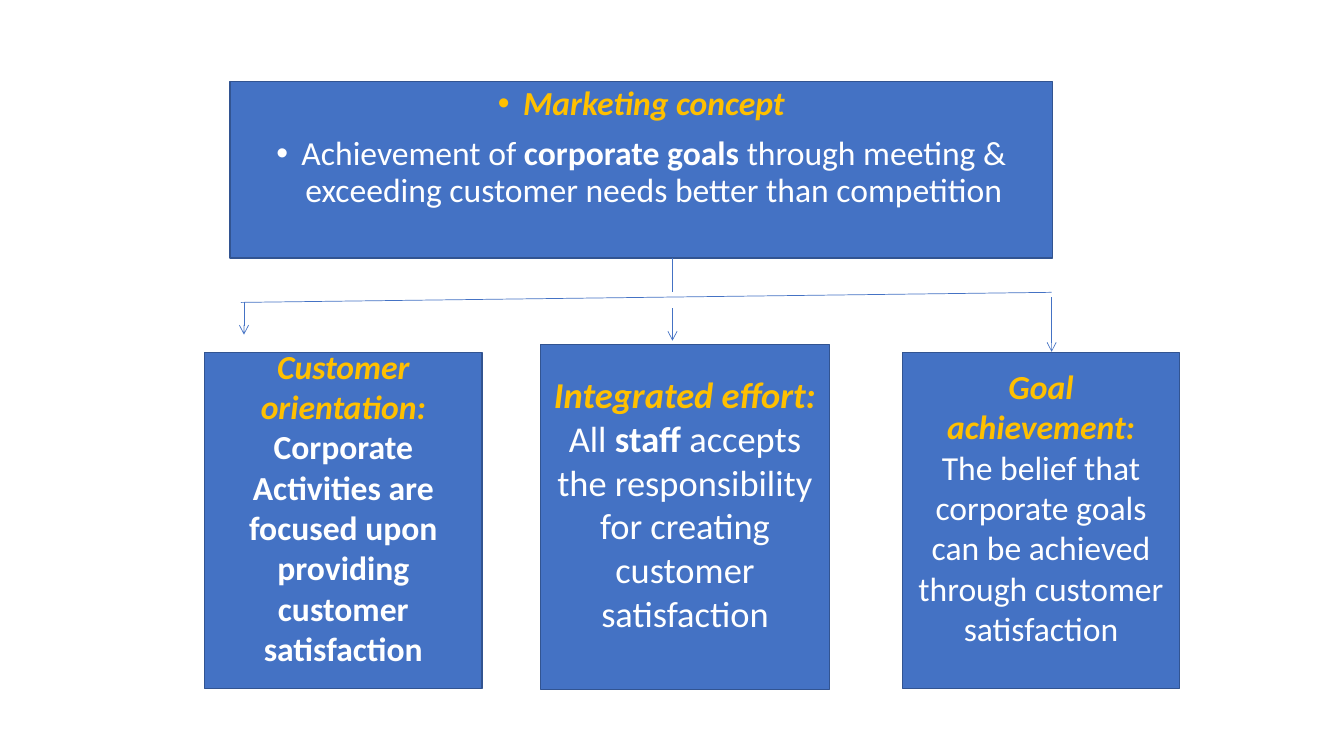
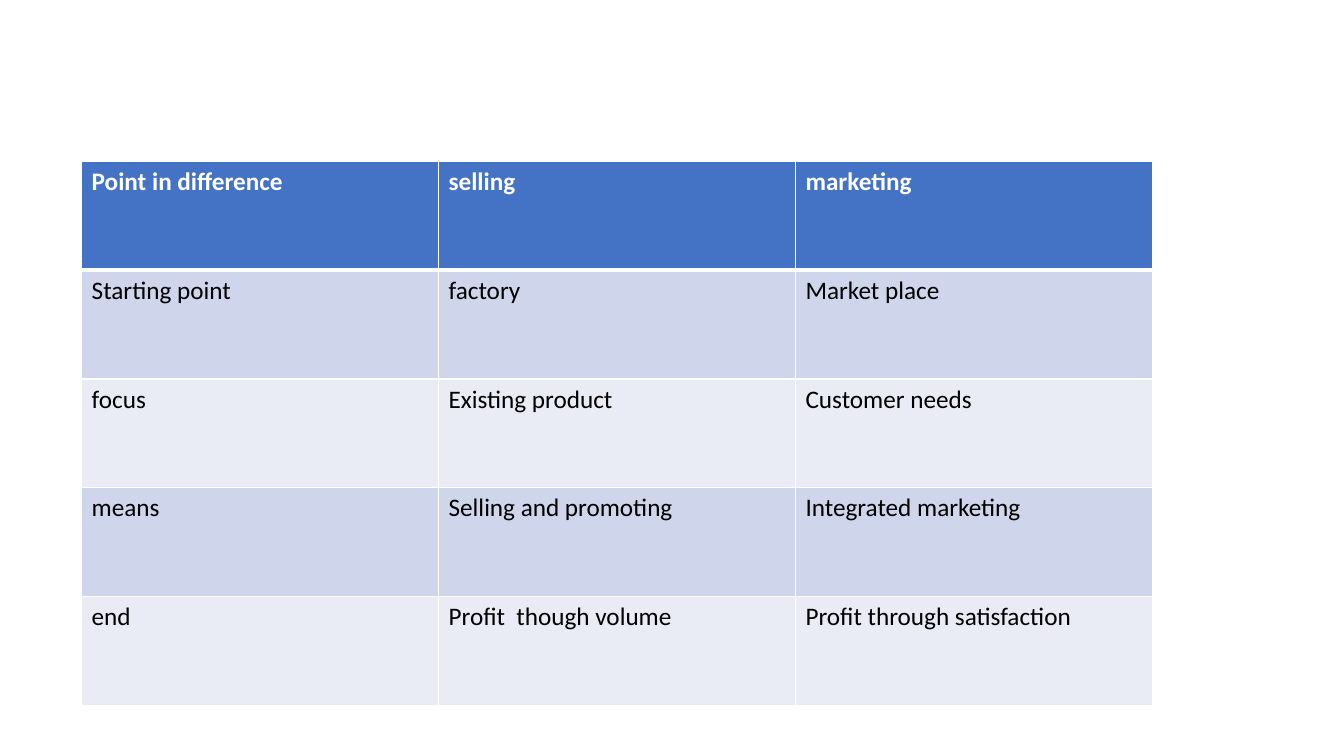
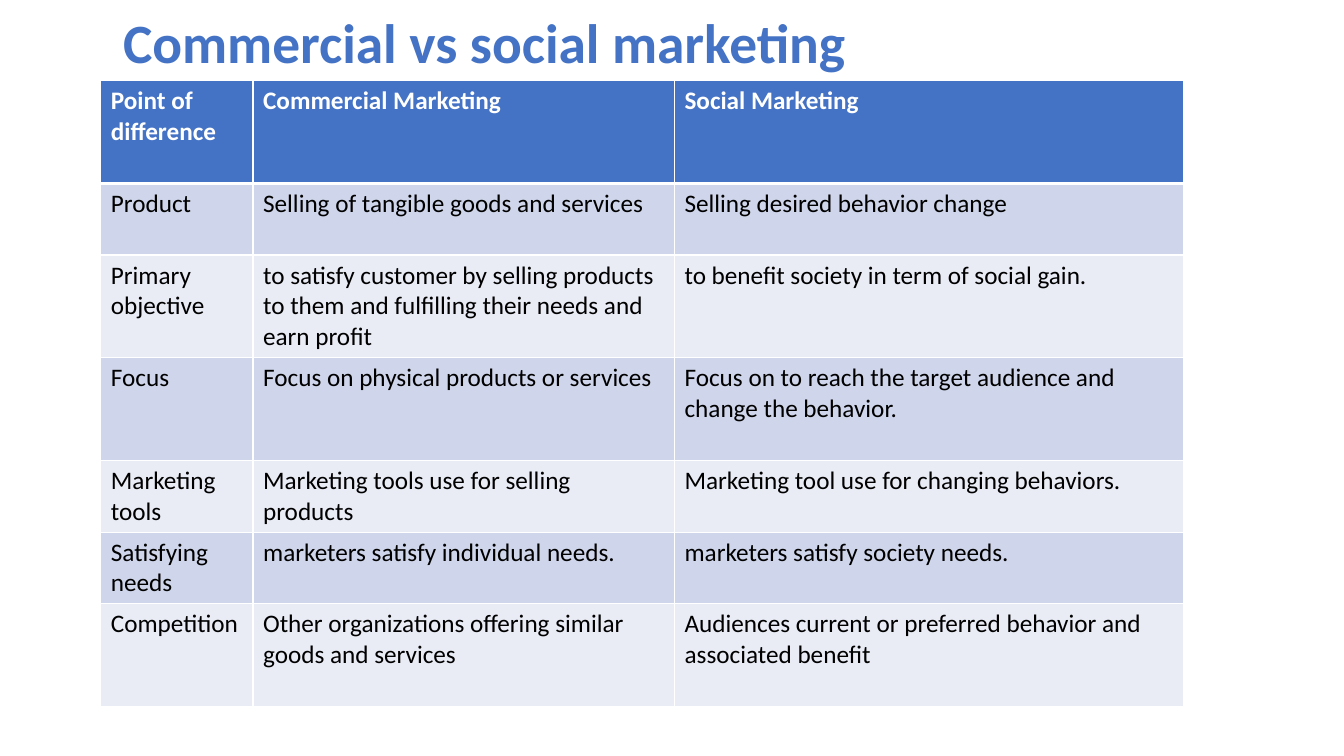
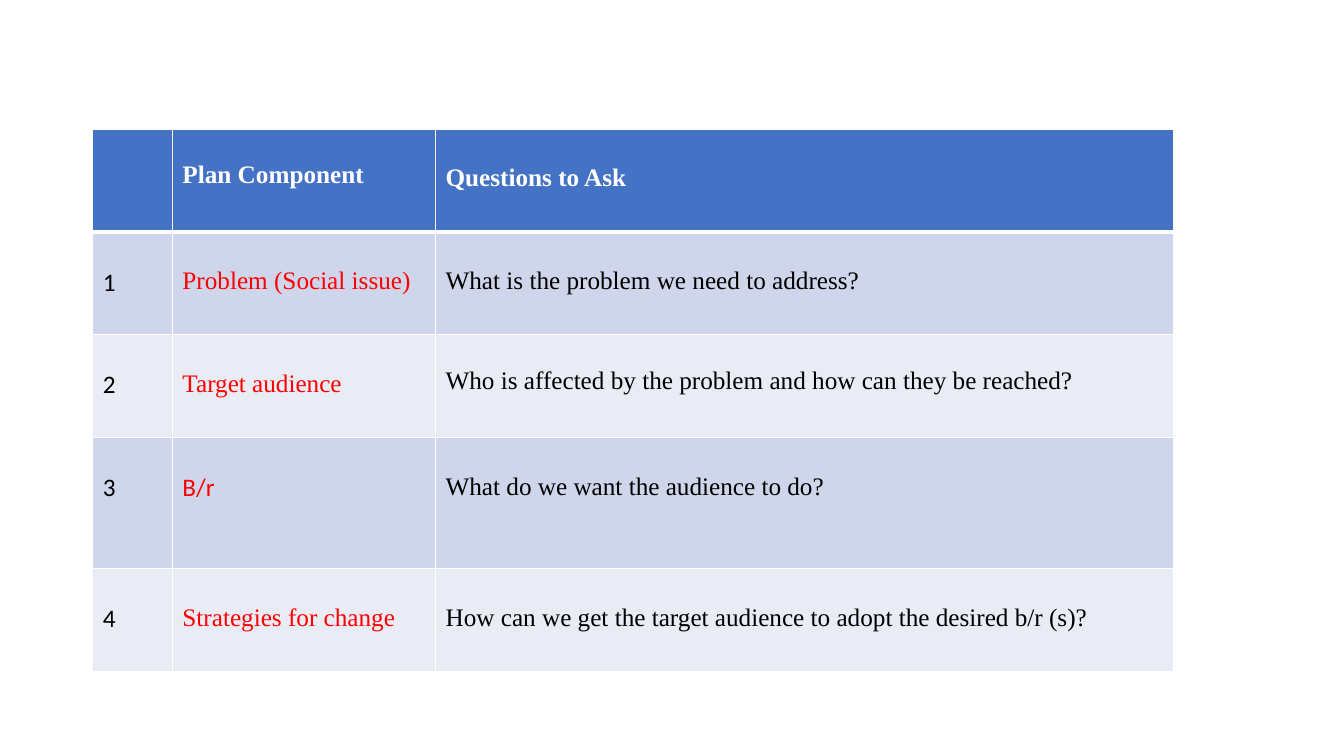
import pptx
import pptx.util
import pptx.dml.color
import pptx.enum.shapes
import pptx.enum.text
import pptx.oxml
import pptx.oxml.ns
from pptx.util import Inches, Pt

RGBColor = pptx.dml.color.RGBColor
BLUE = RGBColor(0x44, 0x72, 0xC4)
EDGE = RGBColor(0x32, 0x54, 0x91)
GOLD = RGBColor(0xFF, 0xC0, 0x00)
RED = RGBColor(0xFF, 0x00, 0x00)
WHITE = RGBColor(0xFF, 0xFF, 0xFF)
BLACK = RGBColor(0x00, 0x00, 0x00)
BANDS = (RGBColor(0xE9, 0xEB, 0xF5), RGBColor(0xCF, 0xD5, 0xEA))
SANS, SERIF = "Calibri", "Times New Roman"
TITLE_ONLY, BLANK = 5, 6

# Run styles
HEAD = {"bold": True, "italic": True, "color": GOLD}
BOLD = {"bold": True, "color": WHITE}
PLAIN = {"bold": False, "color": WHITE}

# Concept diagram: paragraphs are lists of (text, style)
CONCEPT = [
    [("Marketing concept", HEAD)],
    [("Achievement of ", PLAIN), ("corporate goals", BOLD),
     (" through meeting & exceeding customer needs better than competition", PLAIN)],
]
CONCEPT_PLACE = (2.28, 0.81, 8.16, 1.75)
PILLARS = [
    ((2.03, 3.5, 2.75, 3.33), 24, [
        [("Customer orientation: ", HEAD),
         ("Corporate Activities are focused upon providing customer satisfaction", BOLD)]]),
    ((5.36, 3.42, 2.87, 3.42), 26, [
        [("Integrated effort:", HEAD)],
        [("All ", PLAIN), ("staff", BOLD),
         (" accepts the responsibility for creating customer satisfaction", PLAIN)]]),
    ((8.95, 3.5, 2.75, 3.33), 24, [
        [("Goal achievement:", HEAD)],
        [("The belief that corporate goals can be achieved through customer satisfaction",
          PLAIN)]]),
]
# Start x, y, end x, y, arrowhead
LINKS = [
    (6.67, 2.56, 6.67, 2.9, False),
    (2.39, 3, 10.43, 2.9, False),
    (2.42, 3, 2.42, 3.32, True),
    (6.67, 3.06, 6.67, 3.38, True),
    (10.43, 2.95, 10.43, 3.49, True),
]

# Tables
SELLING = [
    ("Point in difference", "selling", "marketing"),
    ("Starting point", "factory", "Market place"),
    ("focus", "Existing product", "Customer needs"),
    ("means", "Selling and promoting", "Integrated marketing"),
    ("end", "Profit  though volume", "Profit through satisfaction"),
]
SOCIAL_TITLE = "Commercial vs social marketing"
SOCIAL = [
    ("Point of difference", "Commercial Marketing", "Social Marketing"),
    ("Product", "Selling of tangible goods and services", "Selling desired behavior change"),
    ("Primary objective",
     "to satisfy customer by selling products to them and fulfilling their needs and earn profit",
     "to benefit society in term of social gain."),
    ("Focus", "Focus on physical products or services",
     "Focus on to reach the target audience and change the behavior."),
    ("Marketing tools", "Marketing tools use for selling products",
     "Marketing tool use for changing behaviors."),
    ("Satisfying needs", "marketers satisfy individual needs.",
     "marketers satisfy society needs."),
    ("Competition", "Other organizations offering similar goods and services",
     "Audiences current or preferred behavior and associated benefit"),
]
PLAN = [
    ("", "Plan Component", "Questions to Ask"),
    ("1", "Problem (Social issue)", "What is the problem we need to address?"),
    ("2", "Target audience", "Who is affected by the problem and how can they be reached?"),
    ("3", "B/r", "What do we want the audience to do?"),
    ("4", "Strategies for change",
     "How can we get the target audience to adopt the desired b/r (s)?"),
]
RAISED_CELLS = {(0, 1), (2, 2)}


def inches(values):
    return [Inches(value) for value in values]


def format_font(font, **values):
    color = values.pop("color")
    for name, value in values.items():
        setattr(font, name, value)
    font.color.rgb = color


def add_part(parent, tag, **attributes):
    part = pptx.oxml.parse_xml(f"<a:{tag} {pptx.oxml.ns.nsdecls('a')}/>")
    for name, value in attributes.items():
        part.set(name, str(value))
    parent.append(part)
    return part


def add_box(page, place, size, paragraphs, margin_bottom, bulleted=False):
    box = page.shapes.add_shape(pptx.enum.shapes.MSO_SHAPE.RECTANGLE, *inches(place))
    box.shadow.inherit = False
    box.fill.solid()
    box.fill.fore_color.rgb = BLUE
    box.line.color.rgb = EDGE
    box.line.width = Pt(1)
    frame = box.text_frame
    anchors = pptx.enum.text.MSO_ANCHOR
    frame_format = {
        "word_wrap": True,
        "vertical_anchor": anchors.TOP if bulleted else anchors.MIDDLE,
        "margin_bottom": Inches(margin_bottom),
    }
    for name, value in frame_format.items():
        setattr(frame, name, value)
    for index, spans in enumerate(paragraphs):
        para = frame.add_paragraph() if index else frame.paragraphs[0]
        para.alignment = pptx.enum.text.PP_ALIGN.CENTER
        if bulleted:
            para.line_spacing = 0.9
            if index:
                para.space_before = Pt(10)
            properties = para._p.get_or_add_pPr()
            properties.set("marL", str(Inches(0.25)))
            properties.set("indent", str(-Inches(0.25)))
            add_part(properties, "buFont", typeface="Arial")
            add_part(properties, "buChar", char="•")
        for text, style in spans:
            span = para.add_run()
            span.text = text
            format_font(span.font, name=SANS, size=Pt(size), **style)


def add_link(page, start_x, start_y, end_x, end_y, arrow):
    link = page.shapes.add_connector(pptx.enum.shapes.MSO_CONNECTOR.STRAIGHT,
                                     *inches((start_x, start_y, end_x, end_y)))
    link.line.color.rgb = BLUE
    link.line.width = Pt(0.5)
    if arrow:
        add_part(link.line._ln, "tailEnd", type="arrow")
    add_part(link._element.spPr, "effectLst")


def set_borders(cell, is_header):
    properties = cell._tc.get_or_add_tcPr()
    for position, side in enumerate(("lnL", "lnR", "lnT", "lnB")):
        width = Pt(3) if is_header and side == "lnB" else Pt(1)
        border = pptx.oxml.parse_xml(
            f"<a:{side} {pptx.oxml.ns.nsdecls('a')} w=\"{width}\"><a:solidFill>"
            f"<a:srgbClr val=\"{WHITE}\"/></a:solidFill></a:{side}>")
        properties.insert(position, border)


def add_grid(page, left, top, widths, heights, rows, look=None):
    """look(row, column) may return a font name, text colour and top margin."""
    frame = page.shapes.add_table(len(rows), len(widths),
                                  *inches((left, top, sum(widths), sum(heights))))
    table = frame.table
    for column, width in zip(table.columns, widths):
        column.width = Inches(width)
    for row, height in zip(table.rows, heights):
        row.height = Inches(height)
    for row_index, texts in enumerate(rows):
        is_header = row_index == 0
        for column_index, text in enumerate(texts):
            cell = table.cell(row_index, column_index)
            cell.fill.solid()
            cell.fill.fore_color.rgb = BLUE if is_header else BANDS[row_index % 2]
            set_borders(cell, is_header)
            font_name, color, margin = (look(row_index, column_index) if look
                                        else (SANS, BLACK, 0.05))
            cell.margin_top = Inches(margin)
            para = cell.text_frame.paragraphs[0]
            if text:
                para.add_run().text = text
            for item in para.runs or [para]:
                format_font(item.font, name=font_name, size=Pt(18), bold=is_header,
                            color=WHITE if is_header else color)


def plan_look(row, column):
    is_sans = column == 0 or (row, column) == (3, 1)
    margin = 0.32 if (row, column) in RAISED_CELLS else 0.35
    return SANS if is_sans else SERIF, RED if column == 1 else BLACK, margin


def add_title(page, text, place):
    title = page.shapes.title
    title.left, title.top, title.width, title.height = inches(place)
    title.text_frame.vertical_anchor = pptx.enum.text.MSO_ANCHOR.MIDDLE
    para = title.text_frame.paragraphs[0]
    para.alignment = pptx.enum.text.PP_ALIGN.LEFT
    para.line_spacing = 0.9
    span = para.add_run()
    span.text = text
    format_font(span.font, name=SANS, size=Pt(39.6), bold=True, color=BLUE)


def main():
    deck = pptx.Presentation()
    deck.slide_width, deck.slide_height = inches((13.33, 7.5))

    def add_page(layout):
        return deck.slides.add_slide(deck.slide_layouts[layout])

    # Concept diagram
    page = add_page(BLANK)
    add_box(page, CONCEPT_PLACE, 24, CONCEPT, 0.05, bulleted=True)
    for place, size, paragraphs in PILLARS:
        add_box(page, place, size, paragraphs, 0.32)
    for link in LINKS:
        add_link(page, *link)

    # Selling against marketing
    add_grid(add_page(BLANK), 0.81, 1.6, [3.54] * 3, [1.08] * 5, SELLING)

    # Commercial against social marketing
    page = add_page(TITLE_ONLY)
    add_title(page, SOCIAL_TITLE, (1.12, 0.15, 11.49, 0.61))
    add_grid(page, 1, 0.8, [1.51, 4.18, 5.05],
             [1.02, 0.71, 1.02, 1.02, 0.71, 0.71, 1.02], SOCIAL)

    # Plan components
    add_grid(add_page(BLANK), 0.92, 1.28, [0.79, 2.61, 7.32],
             [1.02, 1.02, 1.02, 1.3, 1.02], PLAN, plan_look)

    deck.save("out.pptx")


if __name__ == "__main__":
    main()
